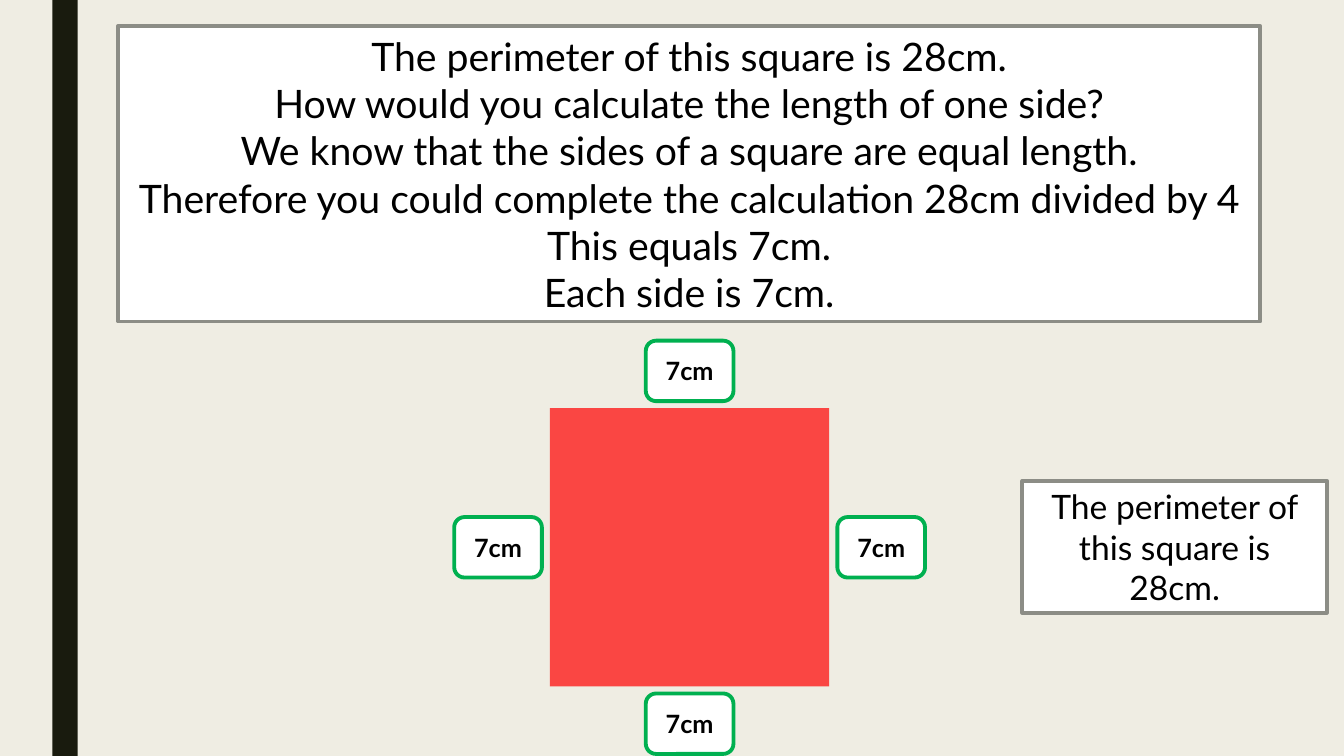
from lxml.etree import SubElement
from pptx import Presentation
from pptx.dml.color import RGBColor
from pptx.enum.shapes import MSO_SHAPE
from pptx.enum.text import MSO_ANCHOR, PP_ALIGN
from pptx.oxml.ns import qn
from pptx.util import Inches, Pt

# Content
STEPS = [
    "The perimeter of this square is 28cm.",
    "How would you calculate the length of one side?",
    "We know that the sides of a square are equal length.",
    "Therefore you could complete the calculation 28cm divided by 4",
    "This equals 7cm.",
    "Each side is 7cm.",
]
FACT = ["The perimeter of this square is 28cm."]
SIDE = ["7cm"]

COLORS = {
    "paper": "EFEDE3",
    "bar": "191B0E",
    "white": "FFFFFF",
    "black": "000000",
    "grey": "8C8D86",
    "green": "00B050",
    "red": "FF0000",
}
FONT = "Lato"

# Layout: the labels sit around the centre of the square
CENTER = (6.84, 5.43)
SQUARE = (2.77, 2.76)
LABEL = (0.87, 0.6)
REACH = (1.9, 1.75)
SIDES = [(0, -1), (0, 1), (1, 0), (-1, 0)]


def rgb(name):
    return RGBColor.from_string(COLORS[name])


def around(center, size):
    return (center[0] - size[0] / 2, center[1] - size[1] / 2, *size)


def add_box(slide, box, fill, line=None, kind=MSO_SHAPE.RECTANGLE):
    shape = slide.shapes.add_shape(kind, *[Inches(v) for v in box])
    shape.shadow.inherit = False
    shape.fill.solid()
    shape.fill.fore_color.rgb = rgb(fill)
    if line:
        shape.line.color.rgb = rgb(line)
        shape.line.width = Pt(2.75)
    else:
        shape.line.fill.background()
    return shape


def write(shape, lines, size, bold=False):
    frame = shape.text_frame
    frame.word_wrap = True
    frame.vertical_anchor = MSO_ANCHOR.MIDDLE
    frame.text = "\n".join(lines)
    for para in frame.paragraphs:
        para.alignment = PP_ALIGN.CENTER
        for run in para.runs:
            run.font.name = FONT
            run.font.size = Pt(size)
            run.font.bold = bold
            run.font.color.rgb = rgb("black")


def main():
    deck = Presentation()
    deck.slide_width, deck.slide_height = Inches(13.33), Inches(7.5)
    slide = deck.slides.add_slide(deck.slide_layouts[6])
    slide.background.fill.solid()
    slide.background.fill.fore_color.rgb = rgb("paper")

    # Side bar and explanation
    add_box(slide, (0.52, 0, 0.25, 7.5), "bar")
    write(add_box(slide, (1.17, 0.26, 11.33, 2.93), "white", "grey"), STEPS, 28)

    # Square, 70% opaque
    square = add_box(slide, around(CENTER, SQUARE), "red")
    color = square.fill._xPr.find(qn("a:solidFill"))[0]
    SubElement(color, qn("a:alpha")).set("val", "70000")

    # Perimeter fact
    write(add_box(slide, (10.14, 4.77, 3.02, 1.31), "white", "grey"), FACT, 24)

    # Side labels
    for dx, dy in SIDES:
        spot = (CENTER[0] + dx * REACH[0], CENTER[1] + dy * REACH[1])
        label = add_box(slide, around(spot, LABEL), "white", "green",
                        MSO_SHAPE.ROUNDED_RECTANGLE)
        label.adjustments[0] = 0.17
        frame = label.text_frame
        frame.margin_left = frame.margin_right = Inches(0.12)
        frame.margin_top = frame.margin_bottom = Inches(0.12)
        write(label, SIDE, 18, True)

    deck.save("out.pptx")


if __name__ == "__main__":
    main()
